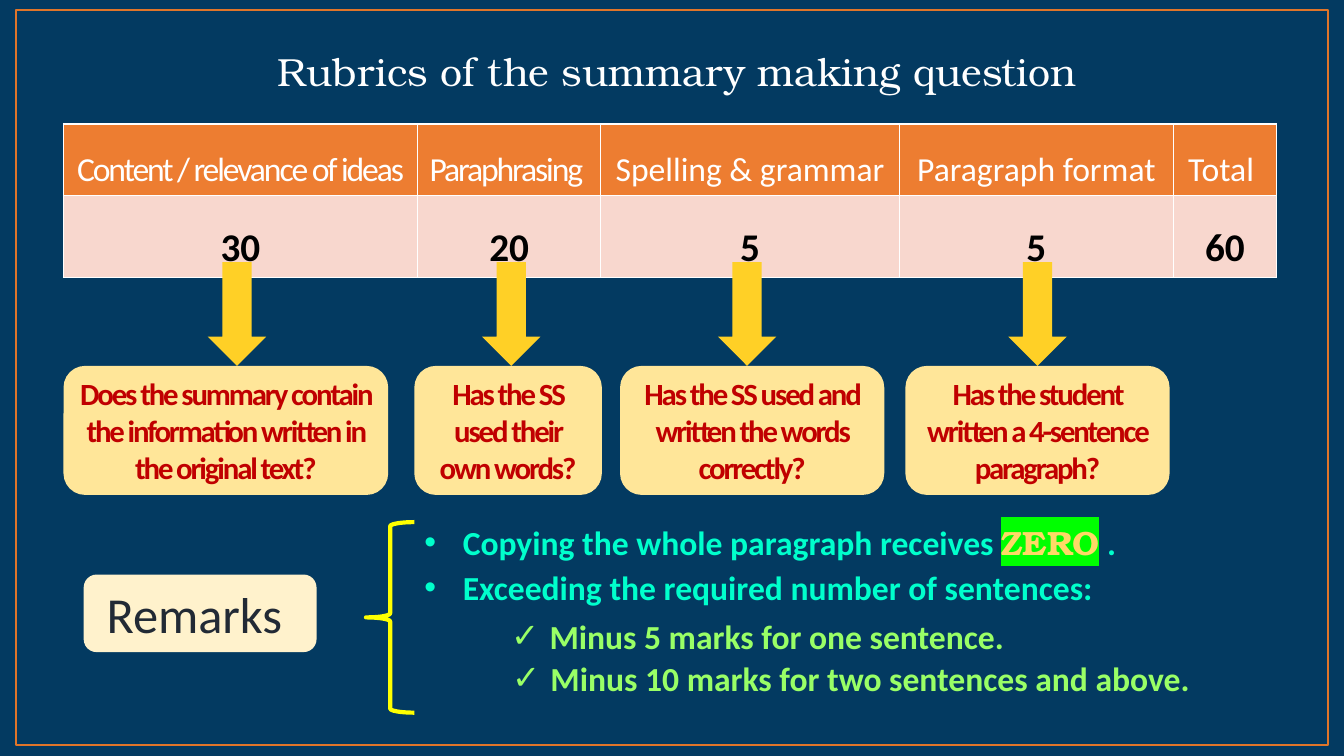
from pptx import Presentation
from pptx.dml.color import RGBColor
from pptx.enum.shapes import MSO_SHAPE
from pptx.enum.text import MSO_ANCHOR, MSO_AUTO_SIZE, PP_ALIGN
from pptx.oxml.ns import qn
from pptx.util import Inches, Pt
from lxml.etree import SubElement

HUES = {
    "navy": "033A61", "white": "FFFFFF", "black": "000000",
    "orange": "ED7D31", "rose": "F8D7CE", "gold": "FFD026",
    "sand": "FFE699", "red": "C00000", "cream": "FFF2CC",
    "slate": "222A35", "yellow": "FFFF00", "aqua": "00FFCC",
    "amber": "FFD966", "green": "00FF00", "lime": "99FF66",
    "rust": "E0752A",
}
HUES = {name: RGBColor.from_string(code) for name, code in HUES.items()}


def write(para, text, hue, size, space=0, **form):
    run = para.add_run()
    run.text = text
    look = {"name": "Calibri", "size": Pt(size), "bold": False, **form}
    for key, value in look.items():
        setattr(run.font, key, value)
    run.font.color.rgb = HUES[hue]
    if space:
        run._r.get_or_add_rPr().set("spc", str(space))
    return run


def draw(kind, left, top, width, height, fill=None, line=None, weight=1):
    shape = slide.shapes.add_shape(
        kind, Inches(left), Inches(top), Inches(width), Inches(height))
    shape.shadow.inherit = False
    if fill:
        shape.fill.solid()
        shape.fill.fore_color.rgb = HUES[fill]
    else:
        shape.fill.background()
    if line:
        shape.line.color.rgb = HUES[line]
        shape.line.width = Pt(weight)
    else:
        shape.line.fill.background()
    return shape


deck = Presentation()
deck.slide_width, deck.slide_height = Inches(13.33), Inches(7.5)
slide = deck.slides.add_slide(deck.slide_layouts[1])
slide.background.fill.solid()
slide.background.fill.fore_color.rgb = HUES["navy"]

title, body = slide.placeholders
places = [(title, 1.67, 0.42, 10.09, 0.57), (body, 4.11, 5.18, 7.84, 1.89)]
for holder, left, top, width, height in places:
    spot = {"left": left, "top": top, "width": width, "height": height}
    for key, value in spot.items():
        setattr(holder, key, Inches(value))
    holder.text_frame.auto_size = MSO_AUTO_SIZE.NONE
    holder.text_frame.word_wrap = True

title.text_frame.vertical_anchor = MSO_ANCHOR.MIDDLE
head = title.text_frame.paragraphs[0]
head.alignment = PP_ALIGN.CENTER
write(head, "Rubrics of the summary making question", "white", 28,
      name="TeX Gyre Bonum")

marks = [
    ("Content / relevance of ideas", "30", 3.51, -150),
    ("Paraphrasing ", "20", 1.82, -150),
    ("Spelling & grammar", "5", 2.96, 0),
    ("Paragraph format", "5", 2.72, 0),
    ("Total ", "60", 1.02, 0),
]
grid = slide.shapes.add_table(
    2, len(marks), Inches(0.63), Inches(1.23), Inches(12.03), Inches(1.5)).table
grid.rows[0].height, grid.rows[1].height = Inches(0.7), Inches(0.8)
for col, (label, score, width, space) in enumerate(marks):
    grid.columns[col].width = Inches(width)
    lines = [(label, "orange", "white", 24, space, False),
             (score, "rose", "black", 28, 0, True)]
    for row, (text, fill, hue, size, gap, bold) in enumerate(lines):
        cell = grid.cell(row, col)
        cell.fill.solid()
        cell.fill.fore_color.rgb = HUES[fill]
        para = cell.text_frame.paragraphs[0]
        para.alignment = PP_ALIGN.CENTER
        para.line_spacing = 1.5
        write(para, text, hue, size, gap, bold=bold)

for left in (2.06, 4.78, 7.12, 10):
    draw(MSO_SHAPE.DOWN_ARROW, left, 2.6, 0.58, 1.03, "gold")

ask = {"fill": "sand", "hue": "red", "size": 22, "space": -150, "bold": True}
tag = {"fill": "cream", "hue": "slate", "size": 36, "space": 0, "bold": False}
cards = [
    ("Does the summary contain the information written in the original text?",
     (0.63, 3.63, 3.22, 1.28), ask),
    ("Has the SS used their own words?", (4.11, 3.63, 1.86, 1.28), ask),
    ("Has the SS used and written the words correctly?",
     (6.15, 3.63, 2.62, 1.28), ask),
    ("Has the student written a 4-sentence paragraph?",
     (8.98, 3.63, 2.62, 1.28), ask),
    ("Remarks ", (0.83, 5.7, 2.31, 0.77), tag),
]
for text, spot, form in cards:
    card = draw(MSO_SHAPE.ROUNDED_RECTANGLE, *spot, form["fill"])
    frame = card.text_frame
    frame.word_wrap = True
    frame.vertical_anchor = MSO_ANCHOR.MIDDLE
    para = frame.paragraphs[0]
    para.alignment = PP_ALIGN.CENTER
    write(para, text, form["hue"], form["size"], form["space"],
          bold=form["bold"])

draw(MSO_SHAPE.LEFT_BRACE, 3.63, 5.18, 0.48, 1.89, line="yellow", weight=3)

notes = [
    ("Copying the whole paragraph receives ", "•", 0, 0.38, 0, "aqua"),
    ("Exceeding the required number of sentences:", "•", 0, 0.38, 3, "aqua"),
    ("Minus 5 marks for one sentence.", "✓", 1, 1.24, 6, "lime"),
    ("Minus 10 marks for two sentences and above.", "✓", 1, 1.25, 1.5, "lime"),
]
frame = body.text_frame
frame.margin_top = frame.margin_bottom = 0
frame.vertical_anchor = MSO_ANCHOR.TOP
for rank, (text, sign, level, indent, gap, hue) in enumerate(notes):
    para = frame.add_paragraph() if rank else frame.paragraphs[0]
    form = {"level": level, "space_before": Pt(gap), "space_after": Pt(0),
            "line_spacing": 1.0}
    for key, value in form.items():
        setattr(para, key, value)
    props = para._p.get_or_add_pPr()
    props.set("marL", str(Inches(indent)))
    props.set("indent", str(Inches(-0.38)))
    SubElement(props, qn("a:buFont")).set("typeface", "Arial")
    SubElement(props, qn("a:buChar")).set("char", sign)
    write(para, text, hue, 24, bold=True)

first = frame.paragraphs[0]
zero = write(first, "ZERO", "amber", 24, bold=True, name="TeX Gyre Bonum")
props = zero._r.get_or_add_rPr()
glow = SubElement(props, qn("a:highlight"))
SubElement(glow, qn("a:srgbClr")).set("val", str(HUES["green"]))
props.find(qn("a:solidFill")).addnext(glow)
write(first, " .", "aqua", 24, bold=True)

draw(MSO_SHAPE.RECTANGLE, 0.16, 0.1, 13.01, 7.29, line="rust", weight=1.5)

deck.save("out.pptx")
